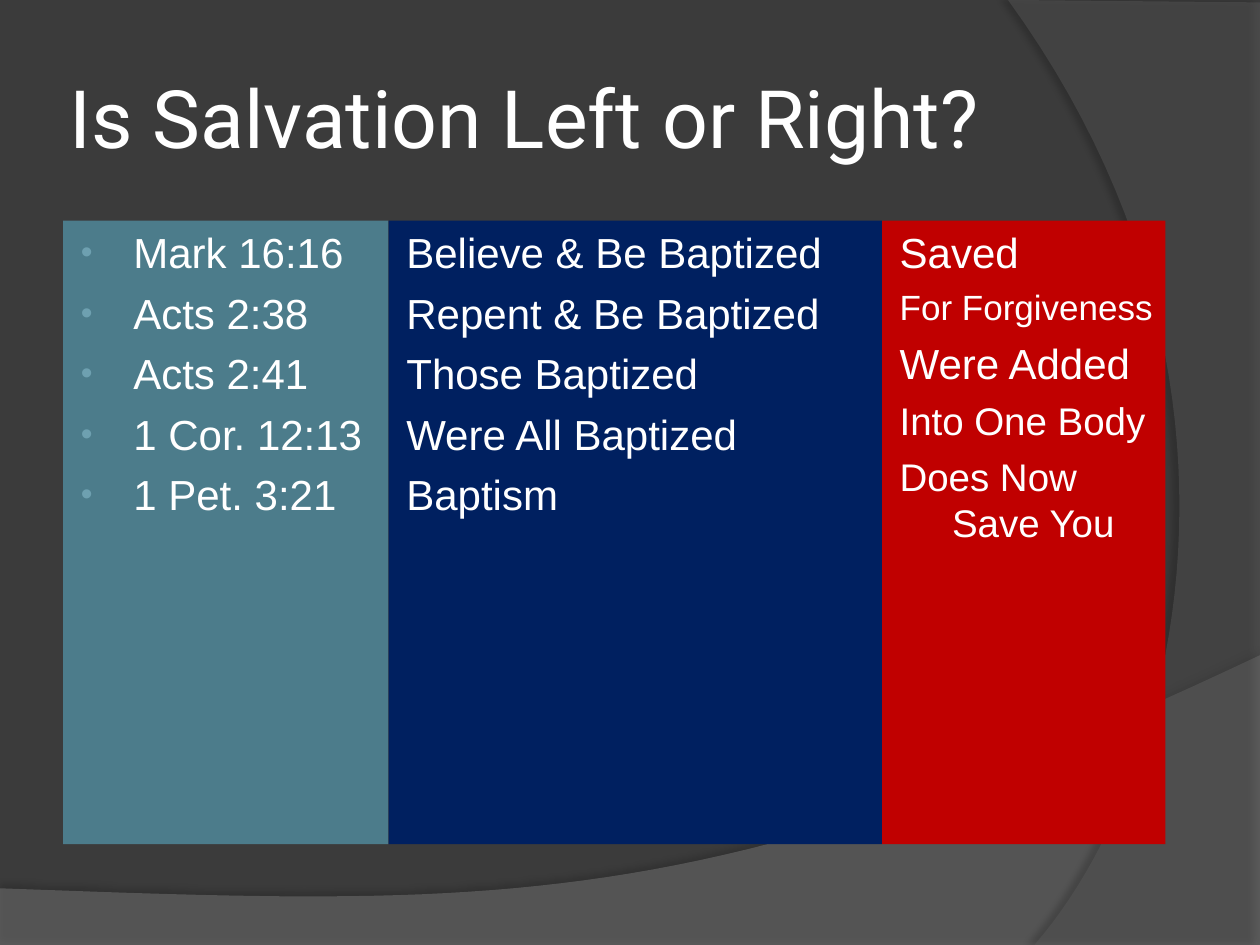
from lxml.etree import SubElement
from pptx import Presentation
from pptx.dml.color import RGBColor
from pptx.enum.text import MSO_ANCHOR, MSO_AUTO_SIZE, PP_ALIGN
from pptx.oxml.ns import qn
from pptx.util import Pt

WHITE = RGBColor(0xFF, 0xFF, 0xFF)
CHARCOAL = RGBColor(0x3B, 0x3B, 0x3B)
WAVE_GRAY = RGBColor(0x7F, 0x7F, 0x7F)
ARC_GRAY = RGBColor(0x5E, 0x5E, 0x5E)
TEAL = RGBColor(0x4C, 0x7C, 0x8B)
BULLET_TEAL = RGBColor(0x6E, 0xA0, 0xB0)
NAVY = RGBColor(0x00, 0x20, 0x60)
RED = RGBColor(0xC0, 0x00, 0x00)

COLUMN_TOP, COLUMN_HEIGHT = 126, 356.4
HANGING = {"marL": Pt(33), "indent": Pt(-30)}
SPACE_RATIO = 0.24  # space before a paragraph, as a share of its text size


def curve(start, first, second, end, steps=48):
    """Points along a cubic curve, without its start."""
    points = []
    for step in range(1, steps + 1):
        t = step / steps
        weights = ((1 - t) ** 3, 3 * t * (1 - t) ** 2, 3 * t * t * (1 - t), t ** 3)
        corners = (start, first, second, end)
        points.append(tuple(sum(w * c[axis] for w, c in zip(weights, corners))
                            for axis in (0, 1)))
    return points


class SlideBuilder:
    def __init__(self, page):
        self.page = page
        self.backdrops = 0
        self.title_format = {"name": "Roboto", "size": Pt(46), "bold": False}
        self.body_format = {"name": "Arial", "bold": False}

    def background(self, color):
        fill = self.page.background.fill
        fill.solid()
        fill.fore_color.rgb = color

    def backdrop(self, points, color, opacity, shadow):
        """Translucent outline with a soft shadow, behind the placeholders."""
        builder = self.page.shapes.build_freeform(*map(Pt, points[0]))
        builder.add_line_segments([tuple(map(Pt, point)) for point in points[1:]])
        shape = builder.convert_to_shape()
        shape.fill.solid()
        shape.fill.fore_color.rgb = color
        shape.line.fill.background()
        shape.shadow.inherit = False

        # Transparency and shadow
        properties = shape._element.spPr
        fill_color = properties.find(qn("a:solidFill"))[0]
        SubElement(fill_color, qn("a:alpha"), val=str(opacity * 1000))
        effects = properties.find(qn("a:effectLst"))
        outer = SubElement(effects, qn("a:outerShdw"), blurRad=str(Pt(shadow["blur"])),
                           dist=str(Pt(shadow["distance"])),
                           dir=str(shadow["angle"] * 60000), rotWithShape="0")
        black = SubElement(outer, qn("a:srgbClr"), val="000000")
        SubElement(black, qn("a:alpha"), val=str(shadow["opacity"] * 1000))

        # Send to the back, in drawing order
        self.page.shapes._spTree.insert(2 + self.backdrops, shape._element)
        self.backdrops += 1

    def place(self, box, left, top, width, height):
        bounds = {"left": left, "top": top, "width": width, "height": height}
        for name, value in bounds.items():
            setattr(box, name, Pt(value))

    def span(self, para, text, formats):
        span = para.add_run()
        span.text = text
        for name, value in formats.items():
            setattr(span.font, name, value)
        span.font.color.rgb = WHITE

    def title(self, text, bounds):
        box = self.page.shapes.title
        self.place(box, *bounds)
        frame = box.text_frame
        settings = {"word_wrap": True, "auto_size": MSO_AUTO_SIZE.NONE,
                    "vertical_anchor": MSO_ANCHOR.MIDDLE}
        settings |= {f"margin_{side}": Pt(3.6) for side in ("left", "top", "right", "bottom")}
        for name, value in settings.items():
            setattr(frame, name, value)
        para = frame.paragraphs[0]
        para.alignment = PP_ALIGN.LEFT
        self.span(para, text, self.title_format)

    def bullet(self, para, visible):
        properties = para._p.get_or_add_pPr()
        for name, value in HANGING.items():
            properties.set(name, str(value))
        if not visible:
            SubElement(properties, qn("a:buNone"))
            return
        color = SubElement(properties, qn("a:buClr"))
        SubElement(color, qn("a:srgbClr"), val=str(BULLET_TEAL))
        SubElement(properties, qn("a:buSzPct"), val="80000")
        SubElement(properties, qn("a:buFont"), typeface="Arial")
        SubElement(properties, qn("a:buChar"), char="•")

    def column(self, box, left, width, color, lines, bulleted=False):
        """Filled column; lines are pairs of text and size."""
        self.place(box, left, COLUMN_TOP, width, COLUMN_HEIGHT)
        box.fill.solid()
        box.fill.fore_color.rgb = color
        frame = box.text_frame
        settings = {"word_wrap": True, "auto_size": MSO_AUTO_SIZE.NONE,
                    "vertical_anchor": MSO_ANCHOR.TOP}
        for name, value in settings.items():
            setattr(frame, name, value)
        for number, (text, size) in enumerate(lines):
            para = frame.add_paragraph() if number else frame.paragraphs[0]
            para.alignment = PP_ALIGN.LEFT
            para.space_before = Pt(size * SPACE_RATIO)
            self.bullet(para, bulleted)
            self.span(para, text, self.body_format | {"size": Pt(size)})


def main():
    deck = Presentation()
    deck.slide_width, deck.slide_height = Pt(720), Pt(540)
    page = deck.slides.add_slide(deck.slide_layouts[3])
    slide = SlideBuilder(page)

    # Background with two sweeping shapes
    slide.background(CHARCOAL)
    wave = curve((720, 374.4), (402.5, 524.9), (281.5, 517.7), (0, 507.6))
    slide.backdrop([(0, 507.6), (0, 540.7), (720, 540.7), (720, 374.4)] + wave,
                   WAVE_GRAY, 45,
                   {"blur": 4, "distance": 3.5, "angle": 270, "opacity": 35})
    arc = curve((591.1, 540), (673.2, 445.7), (733, 216), (576, 0))
    slide.backdrop([(720, 1.4), (720, 540), (591.1, 540)] + arc + [(720, 1.4)],
                   ARC_GRAY, 40,
                   {"blur": 4, "distance": 4, "angle": 180, "opacity": 45})

    # Title
    slide.title("Is Salvation Left or Right?", (36, 21.6, 588.2, 90))

    # Three columns: verse, action, result
    verses = ["Mark 16:16", "Acts 2:38", "Acts 2:41", "1 Cor. 12:13", "1 Pet. 3:21"]
    actions = ["Believe & Be Baptized", "Repent & Be Baptized", "Those Baptized",
               "Were All Baptized", "Baptism"]
    results = [("Saved", 24), ("For Forgiveness", 20), ("Were Added", 24),
               ("Into One Body", 22), ("Does Now Save You", 22)]
    verse_box, action_box = page.placeholders[1], page.placeholders[2]
    result_box = page.shapes.add_textbox(0, 0, 0, 0)
    slide.column(verse_box, 36, 186, TEAL, [(verse, 24) for verse in verses], bulleted=True)
    slide.column(action_box, 222, 282, NAVY, [(action, 24) for action in actions])
    slide.column(result_box, 504, 162, RED, results)

    deck.save("out.pptx")


if __name__ == "__main__":
    main()
